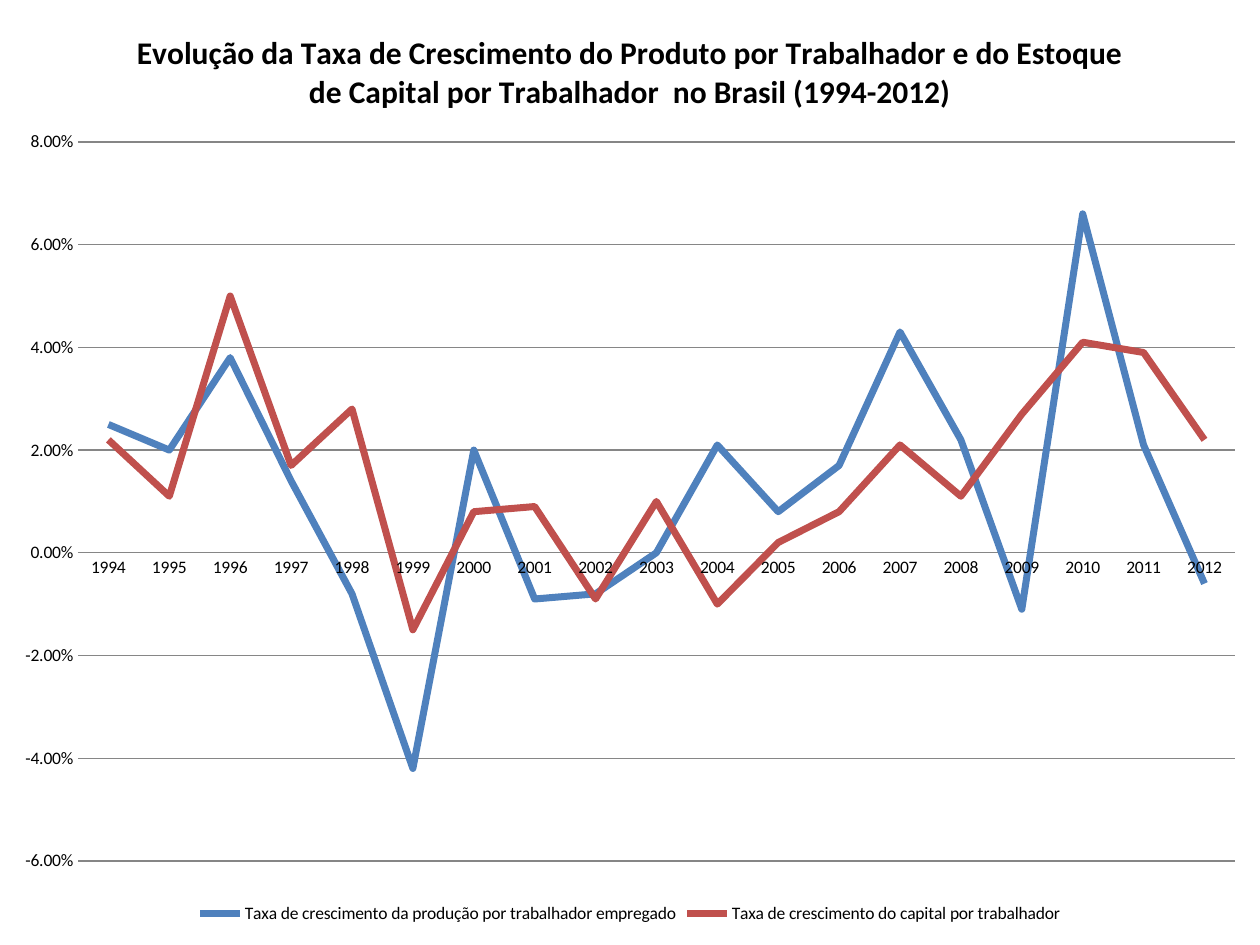
from lxml.etree import SubElement
from pptx import Presentation
from pptx.chart.data import CategoryChartData
from pptx.dml.color import RGBColor
from pptx.enum.chart import XL_CHART_TYPE as ChartType
from pptx.enum.chart import XL_LEGEND_POSITION as LegendPos
from pptx.enum.chart import XL_TICK_MARK as Tick
from pptx.oxml.ns import qn
from pptx.util import Pt

PX = 914400 // 126
SLIDE_W, SLIDE_H = 1260, 945
CHART_W, CHART_H = 1260, 929
PLOT = {"x": 78, "y": 142, "w": 1157, "h": 719}

BLACK = RGBColor(0x00, 0x00, 0x00)
GRAY = RGBColor(0x86, 0x86, 0x86)
BLUE = RGBColor(0x4F, 0x81, 0xBD)
RED = RGBColor(0xC0, 0x50, 0x4D)

TITLE = ("Evolução da Taxa de Crescimento do Produto por Trabalhador e do Estoque "
         "de Capital por Trabalhador  no Brasil (1994-2012)")
YEARS = [str(year) for year in range(1994, 2013)]
SERIES = [
    ("Taxa de crescimento da produção por trabalhador empregado", BLUE,
     [0.025, 0.02, 0.038, 0.014, -0.008, -0.042, 0.02, -0.009, -0.008, 0,
      0.021, 0.008, 0.017, 0.043, 0.022, -0.011, 0.066, 0.021, -0.006]),
    ("Taxa de crescimento do capital por trabalhador", RED,
     [0.022, 0.011, 0.05, 0.017, 0.028, -0.015, 0.008, 0.009, -0.009, 0.01,
      -0.01, 0.002, 0.008, 0.021, 0.011, 0.027, 0.041, 0.039, 0.022]),
]
BODY_FONT = {"name": "Calibri", "size": Pt(10), "bold": False}
TITLE_FONT = {"name": "Calibri", "size": Pt(18), "bold": True}
VALUE_SCALE = {"minimum_scale": -0.06, "maximum_scale": 0.08, "major_unit": 0.02}


def set_attrs(obj, values):
    for name, value in values.items():
        setattr(obj, name, value)


def set_font(font, values):
    set_attrs(font, values)
    font.color.rgb = BLACK


def style_line(line, color, width):
    line.color.rgb = color
    line.width = Pt(width)


def place_plot(chart):
    """Fix the inner plot area as fractions of the chart frame."""
    area = chart._chartSpace.find(".//" + qn("c:plotArea"))
    for old in area.findall(qn("c:layout")):
        area.remove(old)
    layout = SubElement(area, qn("c:layout"))
    area.insert(0, layout)
    manual = SubElement(layout, qn("c:manualLayout"))
    settings = {"layoutTarget": "inner", "xMode": "edge", "yMode": "edge"}
    for key, px in PLOT.items():
        total = CHART_W if key in "xw" else CHART_H
        settings[key] = str(round(px / total, 4))
    for tag, value in settings.items():
        SubElement(manual, qn("c:" + tag)).set("val", value)


def add_growth_chart(s):
    data = CategoryChartData(number_format="0.00%")
    data.categories = YEARS
    for name, _, values in SERIES:
        data.add_series(name, values)
    chart = s.shapes.add_chart(ChartType.LINE, 0, 0, CHART_W * PX, CHART_H * PX, data).chart
    set_font(chart.font, BODY_FONT)

    chart.has_title = True
    tf = chart.chart_title.text_frame
    tf.text = TITLE
    set_font(tf.paragraphs[0].runs[0].font, TITLE_FONT)
    chart.chart_title.include_in_layout = False

    chart.has_legend = True
    set_attrs(chart.legend, {"position": LegendPos.BOTTOM, "include_in_layout": False})
    set_font(chart.legend.font, BODY_FONT)

    for axis in (chart.category_axis, chart.value_axis):
        set_attrs(axis, {"major_tick_mark": Tick.NONE, "minor_tick_mark": Tick.NONE})
        set_font(axis.tick_labels.font, BODY_FONT)
    style_line(chart.category_axis.format.line, GRAY, 0.75)
    axis = chart.value_axis
    set_attrs(axis, VALUE_SCALE)
    set_attrs(axis.tick_labels, {"number_format": "0.00%", "number_format_is_linked": False})
    axis.format.line.fill.background()
    axis.has_major_gridlines = True
    style_line(axis.major_gridlines.format.line, GRAY, 0.75)

    plot = chart.plots[0]
    plot.vary_by_categories = False
    for series, (_, color, _) in zip(plot.series, SERIES):
        series.smooth = False
        style_line(series.format.line, color, 4)
    place_plot(chart)


def main():
    prs = Presentation()
    set_attrs(prs, {"slide_width": SLIDE_W * PX, "slide_height": SLIDE_H * PX})
    add_growth_chart(prs.slides.add_slide(prs.slide_layouts[6]))
    prs.save("out.pptx")


if __name__ == "__main__":
    main()
